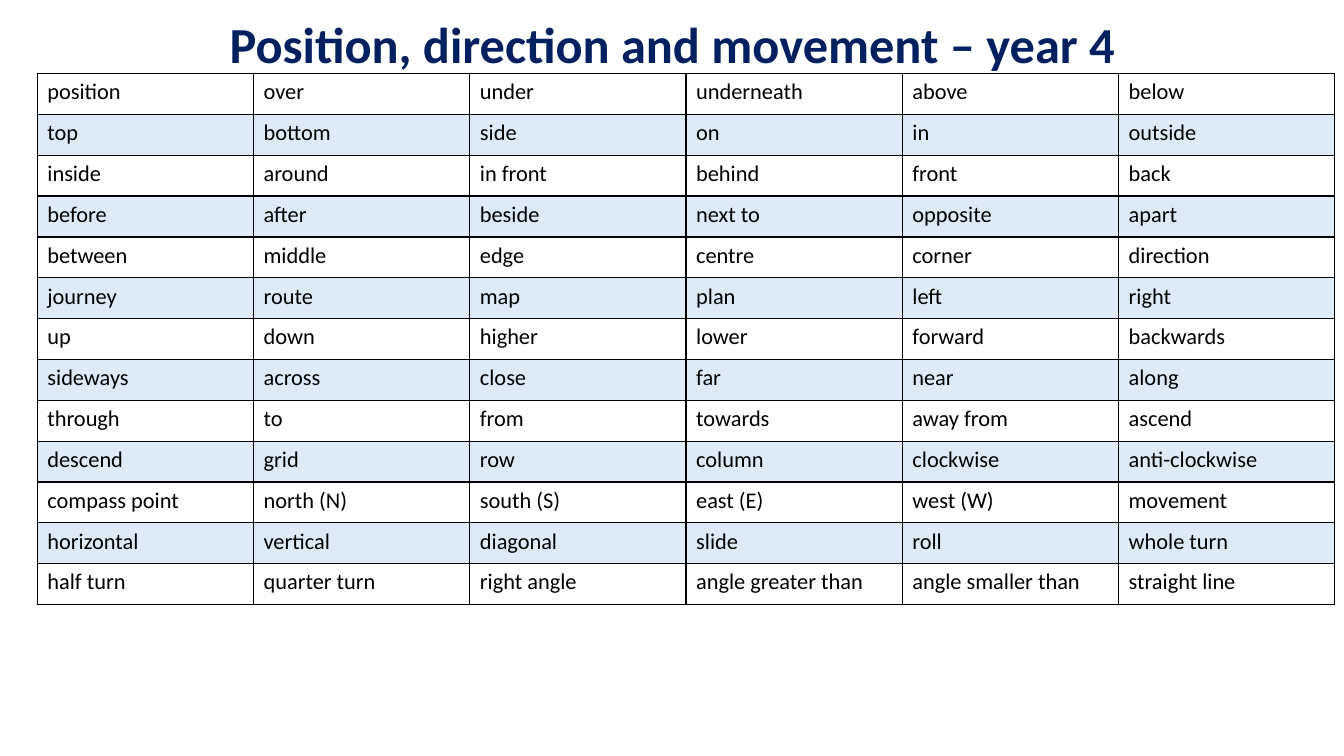
"""Build a vocabulary slide on position, direction and movement."""
from lxml import etree
from pptx import Presentation
from pptx import util as u
from pptx.dml.color import RGBColor
from pptx.enum import text
from pptx.oxml.ns import qn

TITLE = "Position, direction and movement – year 4"
WORDS = [
    ("position", "over", "under", "underneath", "above", "below"),
    ("top", "bottom", "side", "on", "in", "outside"),
    ("inside", "around", "in front", "behind", "front", "back"),
    ("before", "after", "beside", "next to", "opposite", "apart"),
    ("between", "middle", "edge", "centre", "corner", "direction"),
    ("journey", "route", "map", "plan", "left", "right"),
    ("up", "down", "higher", "lower", "forward", "backwards"),
    ("sideways", "across", "close", "far", "near", "along"),
    ("through", "to", "from", "towards", "away from", "ascend"),
    ("descend", "grid", "row", "column", "clockwise", "anti-clockwise"),
    ("compass point", "north (N)", "south (S)", "east (E)", "west (W)", "movement"),
    ("horizontal", "vertical", "diagonal", "slide", "roll", "whole turn"),
    ("half turn", "quarter turn", "right angle", "angle greater than",
     "angle smaller than", "straight line"),
]
COLORS = {"title": "002060", "text": "000000", "line": "000000", "band": "5B9BD5"}
FONT = "Calibri"
BAND_ALPHA = 20


def write(para, words, size, color, bold=False):
    run = para.add_run()
    run.text = words
    font = run.font
    font.name, font.size, font.bold = FONT, u.Pt(size), bold
    font.color.rgb = RGBColor.from_string(COLORS[color])


def border(cell):
    props = cell._tc.get_or_add_tcPr()
    for side in ("lnL", "lnR", "lnT", "lnB"):
        line = etree.SubElement(props, qn("a:" + side), w=str(u.Pt(1)))
        fill = etree.SubElement(line, qn("a:solidFill"))
        etree.SubElement(fill, qn("a:srgbClr"), val=COLORS["line"])


def shade(cell, band):
    if not band:
        cell.fill.background()
        return
    cell.fill.solid()
    cell.fill.fore_color.rgb = RGBColor.from_string(COLORS["band"])
    color = cell._tc.tcPr.find(qn("a:solidFill"))[0]
    etree.SubElement(color, qn("a:alpha"), val=str(BAND_ALPHA * 1000))


def add_title(slide):
    title = slide.shapes.title
    title.left, title.top = u.Inches(0.92), u.Inches(0.06)
    title.width, title.height = u.Inches(11.5), u.Inches(0.81)
    frame = title.text_frame
    frame.auto_size = text.MSO_AUTO_SIZE.NONE
    frame.vertical_anchor = text.MSO_ANCHOR.MIDDLE
    para = frame.paragraphs[0]
    para.alignment = text.PP_ALIGN.CENTER
    para.line_spacing = 0.9
    write(para, TITLE, 36, "title", bold=True)


def add_words(slide):
    table = slide.shapes.add_table(
        len(WORDS), len(WORDS[0]), u.Inches(0.37), u.Inches(0.73),
        u.Inches(12.87), u.Inches(5.27)).table
    table.first_row = table.horz_banding = False
    for r, row in enumerate(WORDS):
        for c, word in enumerate(row):
            cell = table.cell(r, c)
            write(cell.text_frame.paragraphs[0], word, 16, "text")
            border(cell)
            shade(cell, r % 2 == 1)


def main():
    deck = Presentation()
    deck.slide_width, deck.slide_height = u.Inches(13.33), u.Inches(7.5)
    slide = deck.slides.add_slide(deck.slide_layouts[5])
    add_title(slide)
    add_words(slide)
    deck.save("out.pptx")


if __name__ == "__main__":
    main()
